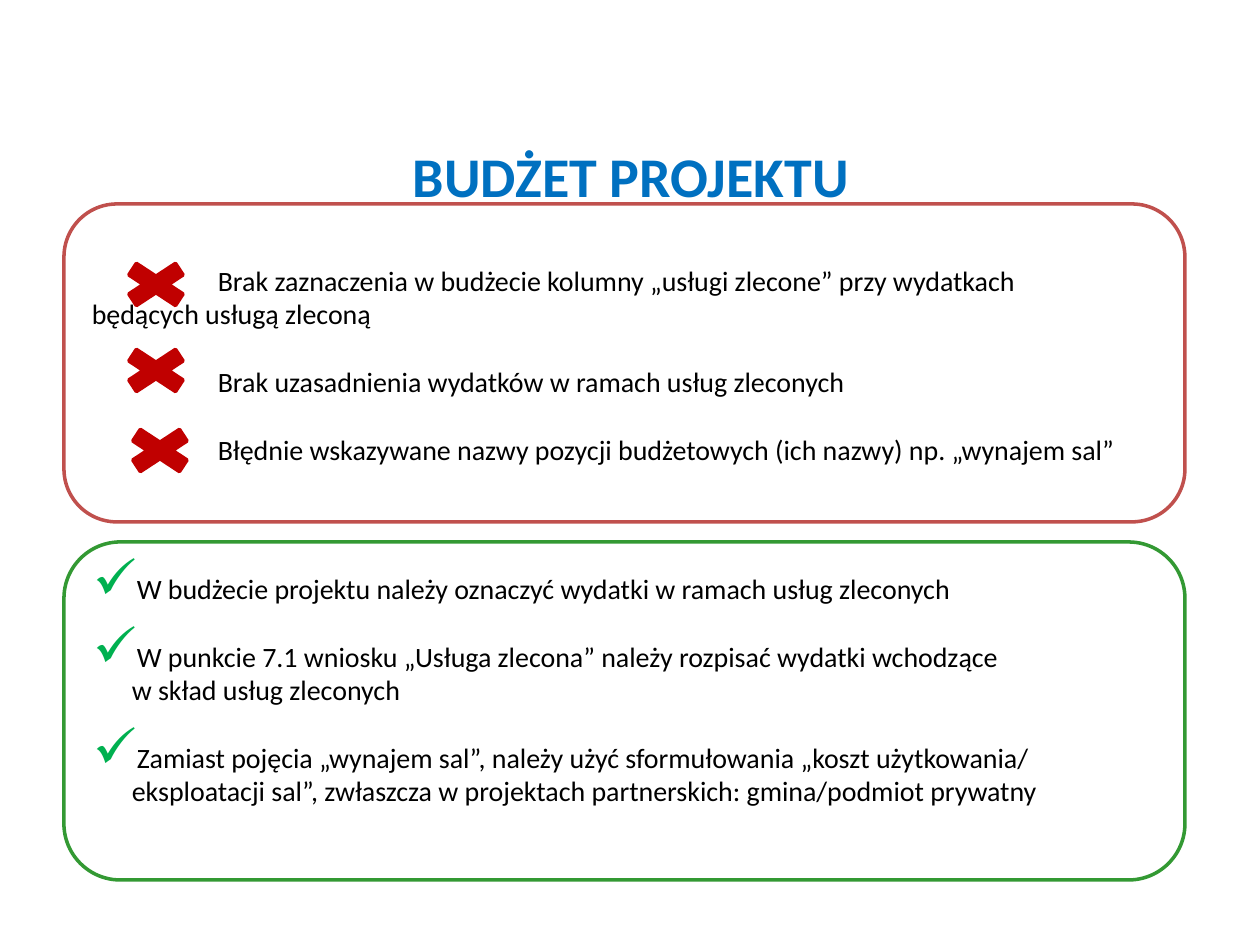
import pptx
import pptx.util
import pptx.dml.color
import pptx.enum.shapes
import pptx.enum.text
import pptx.oxml.ns
import lxml.etree

EMU_PER_PX = 914400 / 126
SHAPES = pptx.enum.shapes.MSO_SHAPE
ALIGN = pptx.enum.text.PP_ALIGN
ANCHOR = pptx.enum.text.MSO_ANCHOR
FONT = "Calibri"
BODY_SIZE = 16
PARA_GAP = 19.5
COLORS = {
    "title": "0070C0", "text": "000000", "error_line": "C0504D",
    "advice_line": "339933", "cross": "C00000", "check": "00B050",
}
ERRORS = [
    "Brak zaznaczenia w budżecie kolumny „usługi zlecone” przy wydatkach\vbędących usługą zleconą",
    "Brak uzasadnienia wydatków w ramach usług zleconych",
    "Błędnie wskazywane nazwy pozycji budżetowych (ich nazwy) np. „wynajem sal”",
]
ADVICE = [
    "W budżecie projektu należy oznaczyć wydatki w ramach usług zleconych",
    "W punkcie 7.1 wniosku „Usługa zlecona” należy rozpisać wydatki wchodzące\vw skład usług zleconych",
    "Zamiast pojęcia „wynajem sal”, należy użyć sformułowania „koszt użytkowania/ "
    "eksploatacji sal”, zwłaszcza w projektach partnerskich: gmina/podmiot prywatny",
]
CROSSES = [(111, 255), (111, 341), (115, 421)]


def px(length):
    return pptx.util.Emu(round(length * EMU_PER_PX))


def rgb(name):
    return pptx.dml.color.RGBColor.from_string(COLORS[name])


def add_span(para, text, size, color, bold=False):
    """Add a run; a vertical tab in the text becomes a line break."""
    for index, line in enumerate(text.split("\v")):
        if index:
            para.add_line_break()
        span = para.add_run()
        span.text = line
        span.font.name = FONT
        span.font.size = pptx.util.Pt(size)
        span.font.bold = bold
        span.font.color.rgb = rgb(color)


def add_outlined(page, kind, area, line, fill=None):
    shape = page.shapes.add_shape(kind, *map(px, area))
    shape.shadow.inherit = False
    if fill:
        shape.fill.solid()
        shape.fill.fore_color.rgb = rgb(fill)
    else:
        shape.fill.background()
    shape.line.color.rgb = rgb(line)
    shape.line.width = pptx.util.Pt(2)
    return shape


def set_indent(para, margin, first_line):
    props = para._p.get_or_add_pPr()
    props.set("marL", str(px(margin)))
    props.set("indent", str(px(first_line)))
    return props


def add_check_bullet(props):
    qn = pptx.oxml.ns.qn
    color = lxml.etree.SubElement(props, qn("a:buClr"))
    lxml.etree.SubElement(color, qn("a:srgbClr"), val=COLORS["check"])
    lxml.etree.SubElement(props, qn("a:buSzPct"), val="200000")
    lxml.etree.SubElement(props, qn("a:buChar"), char="✓")


def add_panel(page, area, line, items, top_inset, margin, first_line, checked=False):
    """Add a rounded frame that holds one paragraph per item."""
    frame = add_outlined(page, SHAPES.ROUNDED_RECTANGLE, area, line).text_frame
    frame.word_wrap = True
    frame.vertical_anchor = ANCHOR.TOP
    frame.margin_top = px(top_inset)
    for index, item in enumerate(items):
        para = frame.add_paragraph() if index else frame.paragraphs[0]
        props = set_indent(para, margin, first_line)
        if checked:
            add_check_bullet(props)
        para.alignment = ALIGN.LEFT
        if index:
            para.space_before = pptx.util.Pt(PARA_GAP)
        add_span(para, item, BODY_SIZE, "text")


def add_title(page, text):
    frame = page.shapes.add_textbox(*map(px, (64, 145, 1134, 60))).text_frame
    frame.word_wrap = True
    frame.vertical_anchor = ANCHOR.MIDDLE
    para = frame.paragraphs[0]
    para.alignment = ALIGN.CENTER
    add_span(para, text, 32, "title", bold=True)


def main():
    deck = pptx.Presentation()
    deck.slide_width, deck.slide_height = px(1260), px(945)
    page = deck.slides.add_slide(deck.slide_layouts[6])
    add_title(page, "BUDŻET PROJEKTU")
    add_panel(page, (64, 204, 1121, 318), "error_line", ERRORS, 44, 0, 126)
    add_panel(page, (64, 542, 1121, 338), "advice_line", ADVICE, 13, 39, -39, checked=True)
    for left, top in CROSSES:
        add_outlined(page, SHAPES.MATH_MULTIPLY, (left, top, 90, 59), "cross", "cross")
    deck.save("out.pptx")


if __name__ == "__main__":
    main()
